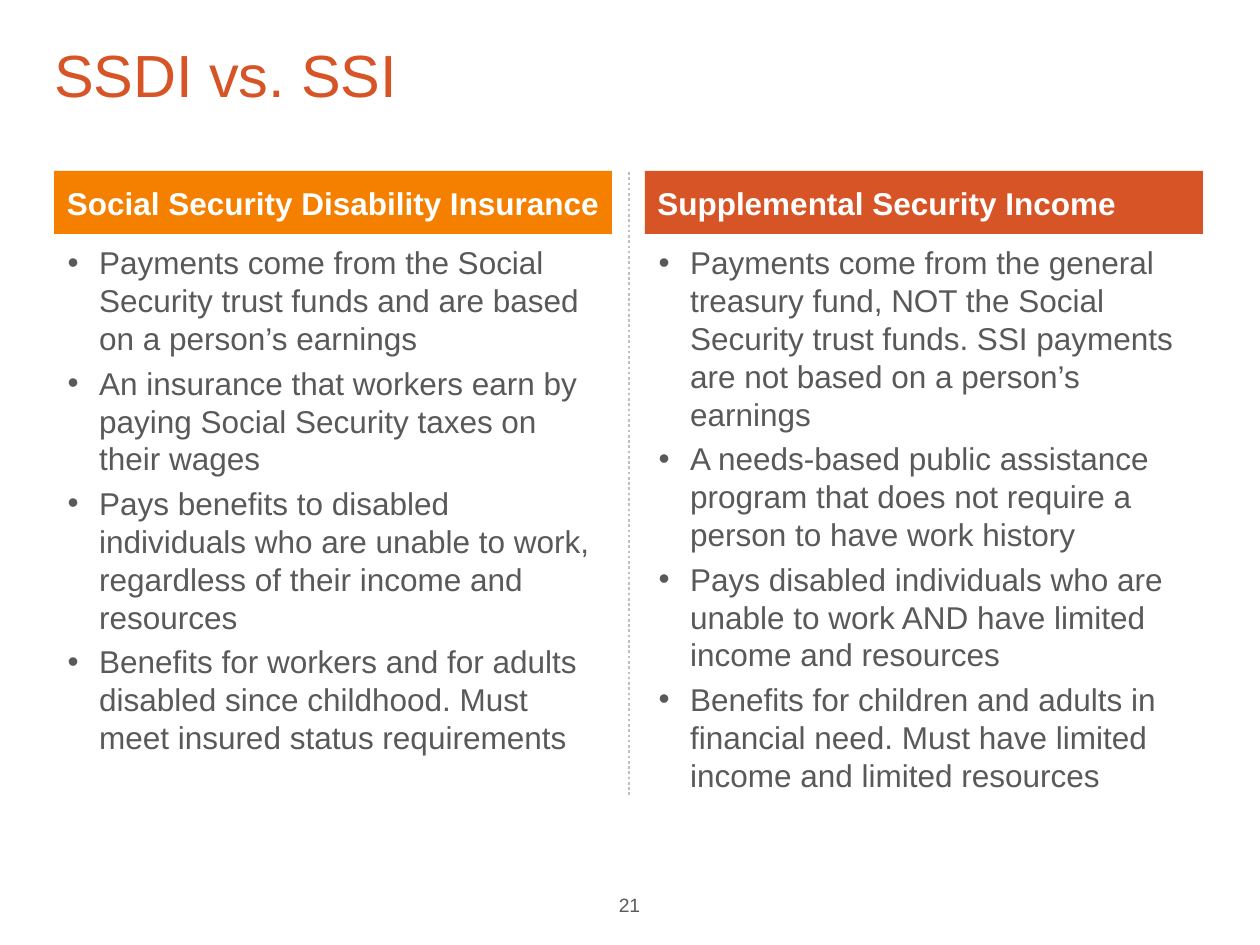
from lxml.etree import SubElement
from pptx import Presentation
from pptx.dml.color import RGBColor
from pptx.enum.dml import MSO_LINE
from pptx.enum.shapes import MSO_CONNECTOR, MSO_SHAPE
from pptx.enum.text import MSO_ANCHOR, MSO_AUTO_SIZE, PP_ALIGN
from pptx.oxml.ns import qn
from pptx.util import Emu, Pt

ORANGE = RGBColor(0xF5, 0x80, 0x00)
RUST = RGBColor(0xD7, 0x54, 0x26)
WHITE = RGBColor(0xFF, 0xFF, 0xFF)
TEXT_GRAY = RGBColor(0x59, 0x59, 0x59)
NUMBER_GRAY = RGBColor(0x5B, 0x5B, 0x5B)
RULE_GRAY = RGBColor(0xBF, 0xBF, 0xBF)

TITLE = "SSDI vs. SSI"
PAGE_NUMBER = "21"
COLUMNS = [
    ("Social Security Disability Insurance", ORANGE, PP_ALIGN.CENTER, [
        "Payments come from the Social Security trust funds and are based on a person’s earnings",
        "An insurance that workers earn by paying Social Security taxes on their wages",
        "Pays benefits to disabled individuals who are unable to work, regardless of their "
        "income and resources",
        "Benefits for workers and for adults disabled since childhood. Must meet insured "
        "status requirements",
    ]),
    ("Supplemental Security Income", RUST, PP_ALIGN.LEFT, [
        "Payments come from the general treasury fund, NOT the Social Security trust funds. "
        "SSI payments are not based on a person’s earnings",
        "A needs-based public assistance program that does not require a person to have "
        "work history",
        "Pays disabled individuals who are unable to work AND have limited income and resources",
        "Benefits for children and adults in financial need. Must have limited income and "
        "limited resources",
    ]),
]

LEFT, COLUMN_WIDTH, COLUMN_STEP = 54, 558, 591
HEADER_TOP, HEADER_HEIGHT = 171, 63
LIST_TOP, LIST_HEIGHT = 237, 558
RULE_X = 629


def px(count):
    return Emu(round(count * 914400 / 126))


def place(shape, left, top, width, height):
    shape.left, shape.top = px(left), px(top)
    shape.width, shape.height = px(width), px(height)


def write(para, text, size, color, align=PP_ALIGN.LEFT, bold=False):
    para.alignment = align
    span = para.add_run()
    span.text = text
    font = span.font
    font.name, font.size, font.bold = "Arial", Pt(size), bold
    font.color.rgb = color


def add_header(page, left, text, fill, align):
    bar = page.shapes.add_shape(MSO_SHAPE.RECTANGLE, px(left), px(HEADER_TOP),
                                px(COLUMN_WIDTH), px(HEADER_HEIGHT))
    bar.shadow.inherit = False
    bar.fill.solid()
    bar.fill.fore_color.rgb = fill
    bar.line.fill.background()
    frame = bar.text_frame
    frame.word_wrap = True
    frame.vertical_anchor = MSO_ANCHOR.MIDDLE
    write(frame.paragraphs[0], text, 18, WHITE, align, bold=True)


def fill_list(body, left, items):
    place(body, left, LIST_TOP, COLUMN_WIDTH, LIST_HEIGHT)
    frame = body.text_frame
    frame.auto_size = MSO_AUTO_SIZE.NONE
    for index, item in enumerate(items):
        para = frame.add_paragraph() if index else frame.paragraphs[0]
        para.space_before, para.space_after = Pt(0), Pt(4)
        props = para._p.get_or_add_pPr()
        props.set("marL", "228600")
        props.set("indent", "-228600")
        SubElement(props, qn("a:buFont"), typeface="Arial")
        SubElement(props, qn("a:buChar"), char="•")
        write(para, item, 18, TEXT_GRAY)


def main():
    deck = Presentation()
    deck.slide_width, deck.slide_height = px(1260), px(945)
    page = deck.slides.add_slide(deck.slide_layouts.get_by_name("Two Content"))

    title, *bodies = page.placeholders
    place(title, LEFT, 52, 1149, 98)
    frame = title.text_frame
    frame.auto_size = MSO_AUTO_SIZE.NONE
    frame.vertical_anchor = MSO_ANCHOR.TOP
    frame.margin_left = frame.margin_top = 0
    frame.paragraphs[0].line_spacing = 0.8
    write(frame.paragraphs[0], TITLE, 34, RUST)

    for index, (heading, fill, align, items) in enumerate(COLUMNS):
        left = LEFT + index * COLUMN_STEP
        add_header(page, left, heading, fill, align)
        fill_list(bodies[index], left + 1, items)

    rule = page.shapes.add_connector(MSO_CONNECTOR.STRAIGHT, px(RULE_X), px(HEADER_TOP + 1),
                                     px(RULE_X), px(LIST_TOP + LIST_HEIGHT))
    rule.line.color.rgb = RULE_GRAY
    rule.line.width = Pt(1.5)
    rule.line.dash_style = MSO_LINE.ROUND_DOT
    SubElement(rule._element.spPr, qn("a:effectLst"))

    number = page.shapes.add_textbox(px(590), px(887), px(79), px(58))
    number.text_frame.word_wrap = True
    write(number.text_frame.paragraphs[0], PAGE_NUMBER, 11, NUMBER_GRAY, PP_ALIGN.CENTER)

    deck.save("out.pptx")


if __name__ == "__main__":
    main()
